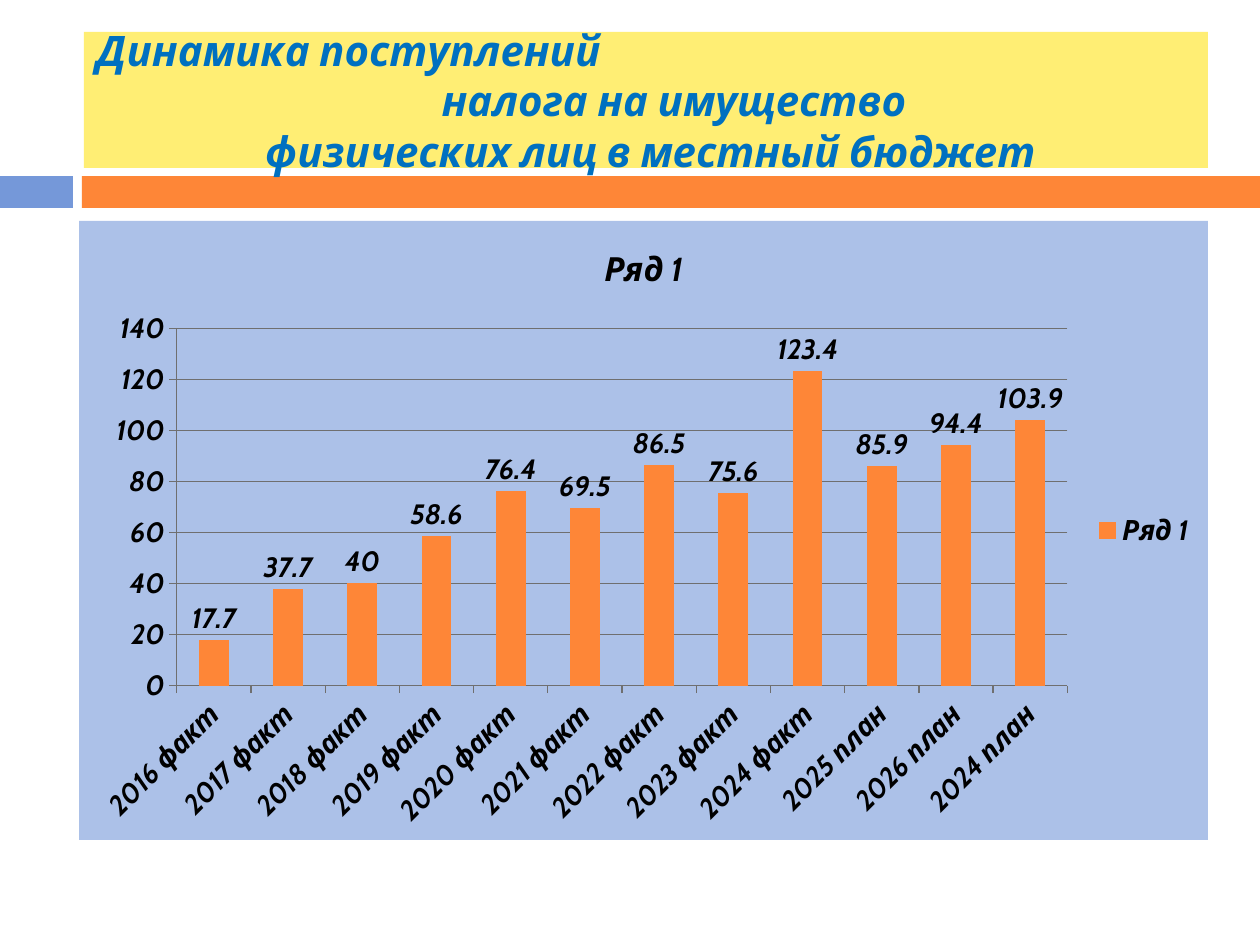
from pptx import Presentation
from pptx.chart.data import CategoryChartData as ChartData
from pptx.dml.color import RGBColor
from pptx.enum.chart import XL_CHART_TYPE as Kind
from pptx.enum.chart import XL_LABEL_POSITION as Spot
from pptx.enum.chart import XL_LEGEND_POSITION as Side
from pptx.enum.chart import XL_TICK_MARK as Tick
from pptx.enum.shapes import MSO_SHAPE as Shape
from pptx.enum.text import MSO_ANCHOR as Anchor
from pptx.enum.text import PP_ALIGN as Align
from pptx.oxml import parse_xml
from pptx.oxml.ns import nsdecls
from pptx.util import Pt

PX = 914400 // 126  # EMU in one px
FONT = "Cabin"
ORANGE, BLUE, PALE, YELLOW = "FE8637", "7598D9", "ACC1E8", "FFEE74"
GREY, BLACK, AZURE = "6F6F6F", "000000", "0070C0"

YEARS = [f"{y} факт" for y in range(2016, 2025)]
YEARS += ["2025 план", "2026 план", "2024 план"]
SUMS = [17.7, 37.7, 40, 58.6, 76.4, 69.5, 86.5, 75.6, 123.4, 85.9, 94.4, 103.9]


def color(code):
    return RGBColor.from_string(code)


def style(font, size, code):
    font.name, font.size = FONT, Pt(size)
    font.bold = font.italic = True
    font.color.rgb = color(code)


def paint(fill, code):
    fill.solid()
    fill.fore_color.rgb = color(code)


def bar(slide, x, y, w, h, code):
    box = slide.shapes.add_shape(Shape.RECTANGLE, x * PX, y * PX, w * PX, h * PX)
    box.shadow.inherit = False
    paint(box.fill, code)
    box.line.fill.background()
    return box


def write(par, text, size=24, code=AZURE, align=Align.CENTER, indent=0):
    par.alignment = align
    if indent:
        par._p.get_or_add_pPr().set("marL", str(indent * PX))
    run = par.add_run()
    run.text = text
    style(run.font, size, code)


def heading(slide):
    frame = bar(slide, 84, 32, 1124, 136, YELLOW).text_frame
    frame.word_wrap = True
    frame.vertical_anchor = Anchor.MIDDLE
    write(frame.paragraphs[0], "Динамика поступлений", align=Align.LEFT)
    write(frame.add_paragraph(), "налога на имущество", indent=56)
    write(frame.add_paragraph(), "физических лиц в местный бюджет", indent=9)


def chart(slide, x, y, w, h):
    data = ChartData()
    data.categories = YEARS
    data.add_series("Ряд 1", SUMS)
    graph = slide.shapes.add_chart(
        Kind.COLUMN_CLUSTERED, x * PX, y * PX, w * PX, h * PX, data).chart
    style(graph.font, 16, BLACK)

    # Title and legend
    graph.has_title = True
    write(graph.chart_title.text_frame.paragraphs[0], "Ряд 1", size=19, code=BLACK)
    graph.has_legend = True
    graph.legend.position = Side.RIGHT
    graph.legend.include_in_layout = False

    # Axes
    for axis in (graph.category_axis, graph.value_axis):
        axis.major_tick_mark = Tick.OUTSIDE
        axis.format.line.color.rgb = color(GREY)
    grid = graph.value_axis
    grid.minimum_scale, grid.maximum_scale, grid.major_unit = 0, 140, 20
    grid.has_major_gridlines = True
    grid.major_gridlines.format.line.color.rgb = color(GREY)

    # Columns and their values
    plot = graph.plots[0]
    plot.gap_width = 150
    plot.vary_by_categories = False
    paint(plot.series[0].format.fill, ORANGE)
    plot.has_data_labels = True
    labels = plot.data_labels
    labels.show_value = True
    labels.position = Spot.OUTSIDE_END
    style(labels.font, 16, BLACK)

    # Chart background
    back = parse_xml(
        f'<c:spPr {nsdecls("c", "a")}><a:solidFill><a:srgbClr val="{PALE}"/>'
        '</a:solidFill><a:ln><a:noFill/></a:ln></c:spPr>')
    graph._chartSpace.chart.addnext(back)


def main():
    deck = Presentation()
    deck.slide_width, deck.slide_height = 1260 * PX, 945 * PX
    slide = deck.slides.add_slide(deck.slide_layouts[6])
    # Divider bars
    bar(slide, 0, 176, 73, 32, BLUE)
    bar(slide, 82, 176, 1178, 32, ORANGE)
    heading(slide)
    chart(slide, 79, 221, 1129, 619)
    deck.save("out.pptx")


if __name__ == "__main__":
    main()
